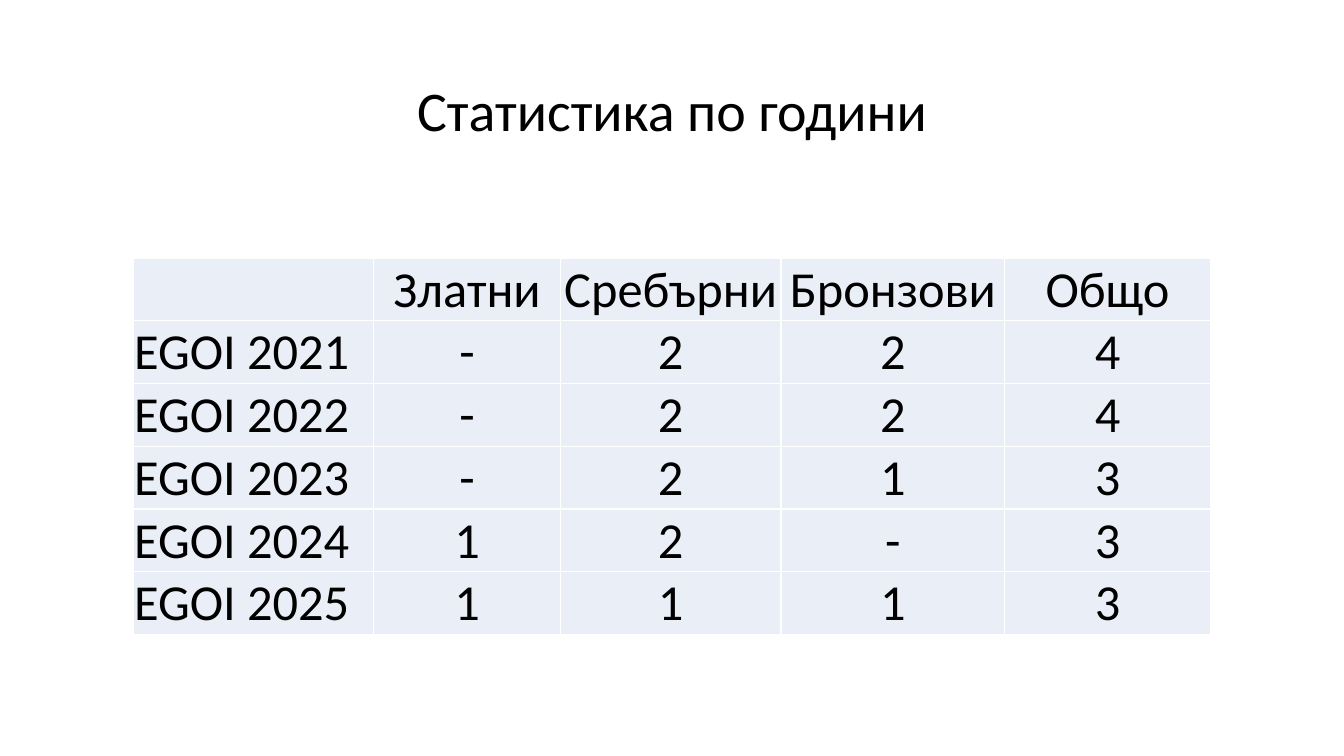
import lxml.etree
import pptx
import pptx.dml.color
import pptx.enum.text
import pptx.oxml
import pptx.oxml.ns
import pptx.util

Pt = pptx.util.Pt
ALIGN = pptx.enum.text.PP_ALIGN
ANCHOR = pptx.enum.text.MSO_ANCHOR

FONT = "Calibri"
BLACK, WHITE, PALE_BLUE = "000000", "FFFFFF", "EAEFF7"
TITLE_ONLY_LAYOUT = 5

HEADINGS = ["", "Златни", "Сребърни", "Бронзови", "Общо"]
MEDALS_BY_YEAR = {
    2021: ["-", "2", "2", "4"],
    2022: ["-", "2", "2", "4"],
    2023: ["-", "2", "1", "3"],
    2024: ["1", "2", "-", "3"],
    2025: ["1", "1", "1", "3"],
}
COLUMN_SHARES = [2.39, 1.85, 2.19, 2.22, 2.04]


def color(hex_string):
    return pptx.dml.color.RGBColor.from_string(hex_string)


def write_text(frame, text, size, align=ALIGN.CENTER, line_spacing=None):
    para = frame.paragraphs[0]
    para.alignment = align
    para.line_spacing = line_spacing
    span = para.add_run()
    span.text = text
    span.font.name = FONT
    span.font.size = Pt(size)
    span.font.bold = False
    span.font.color.rgb = color(BLACK)


def set_cell_borders(cell, hex_string, width):
    properties = cell._tc.get_or_add_tcPr()
    for side in ("lnL", "lnR", "lnT", "lnB"):
        properties.append(pptx.oxml.parse_xml(
            f'<a:{side} {pptx.oxml.ns.nsdecls("a")} w="{Pt(width)}"><a:solidFill>'
            f'<a:srgbClr val="{hex_string}"/></a:solidFill></a:{side}>'))


def format_cell(cell, text, is_year):
    set_cell_borders(cell, WHITE, 1)
    cell.fill.solid()
    cell.fill.fore_color.rgb = color(PALE_BLUE)
    cell.margin_left = cell.margin_right = cell.margin_top = Pt(0.75)
    cell.margin_bottom = Pt(0)
    cell.vertical_anchor = ANCHOR.BOTTOM if is_year else ANCHOR.MIDDLE
    if text:
        write_text(cell.text_frame, text, 36,
                   align=ALIGN.LEFT if is_year else ALIGN.CENTER)


def place_title(slide, text, left, top, width, height):
    title = slide.shapes.title
    title.left, title.top = Pt(left), Pt(top)
    title.width, title.height = Pt(width), Pt(height)
    title.text_frame.vertical_anchor = ANCHOR.MIDDLE
    write_text(title.text_frame, text, 40, line_spacing=0.9)


def place_medal_table(slide, left, top, width, height):
    rows = [HEADINGS] + [[f"EGOI {year}", *medals]
                         for year, medals in MEDALS_BY_YEAR.items()]
    table = slide.shapes.add_table(len(rows), len(HEADINGS), Pt(left), Pt(top),
                                   Pt(width), Pt(height)).table
    table.first_row = table.horz_banding = False
    for column, share in zip(table.columns, COLUMN_SHARES):
        column.width = Pt(width * share / sum(COLUMN_SHARES))
    for row_index, texts in enumerate(rows):
        table.rows[row_index].height = Pt(height / len(rows))
        for column_index, text in enumerate(texts):
            format_cell(table.cell(row_index, column_index), text,
                        is_year=row_index > 0 and column_index == 0)


def main():
    deck = pptx.Presentation()
    deck.slide_width, deck.slide_height = Pt(960), Pt(540)
    slide = deck.slides.add_slide(deck.slide_layouts[TITLE_ONLY_LAYOUT])
    slide.background.fill.solid()
    slide.background.fill.fore_color.rgb = color(WHITE)
    place_title(slide, "Статистика по години", 66, 28.8, 828, 104.4)
    place_medal_table(slide, 95, 184.3, 769.7, 268)
    deck.save("out.pptx")


if __name__ == "__main__":
    main()
